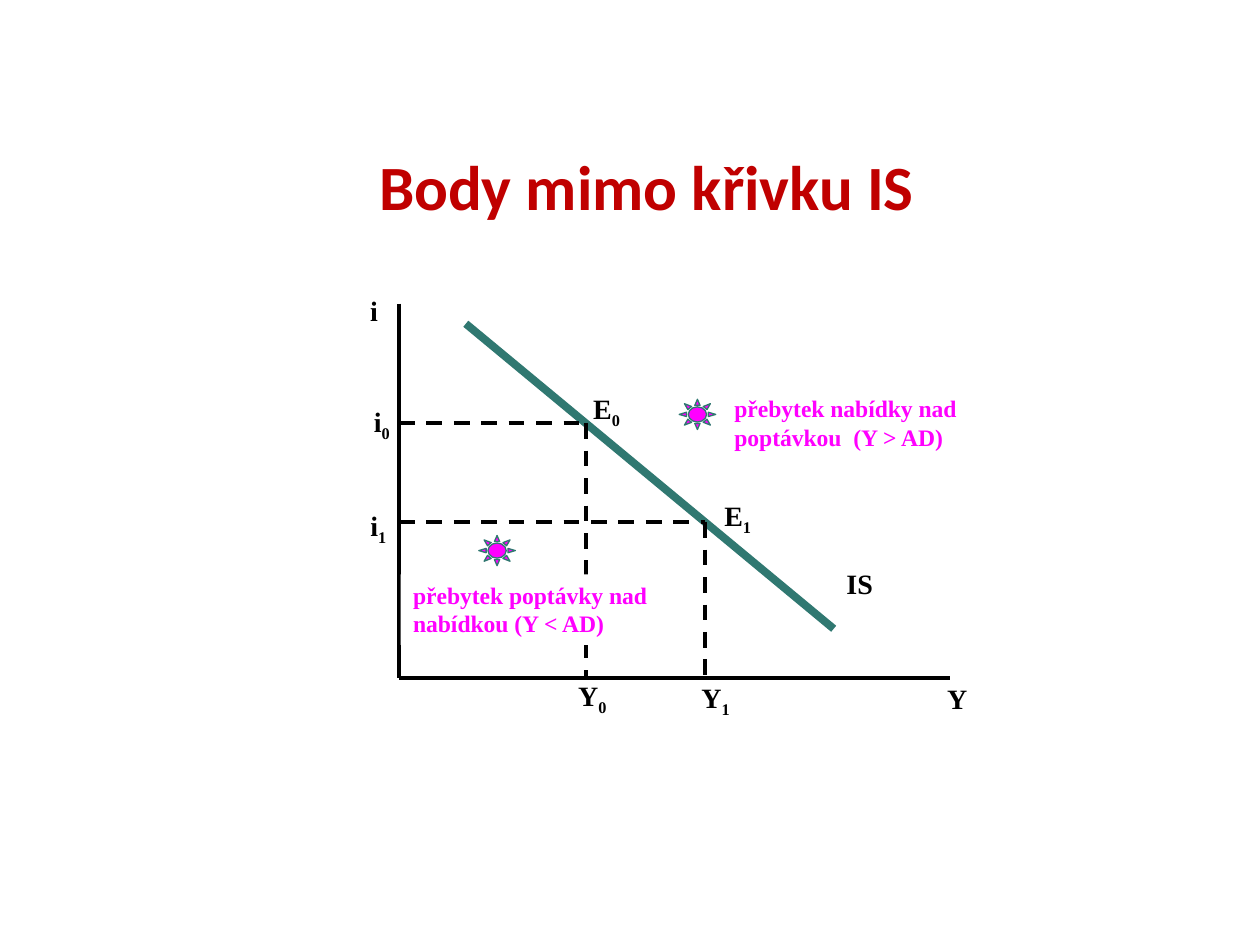
from lxml import etree
from pptx import Presentation
from pptx.dml.color import RGBColor
from pptx.enum.dml import MSO_LINE
from pptx.enum.shapes import MSO_CONNECTOR, MSO_SHAPE
from pptx.enum.text import MSO_ANCHOR, MSO_AUTO_SIZE, PP_ALIGN
from pptx.oxml.ns import qn
from pptx.util import Pt

DASH = MSO_LINE.DASH
LINE = MSO_CONNECTOR.STRAIGHT
SUN = MSO_SHAPE.SUN
TOP = MSO_ANCHOR.TOP
FIXED = MSO_AUTO_SIZE.NONE
GROW = MSO_AUTO_SIZE.SHAPE_TO_FIT_TEXT
CENTER = PP_ALIGN.CENTER

BLACK, RED, TEAL, PINK, WHITE = "000000", "C00000", "307871", "FF00FF", "FFFFFF"
HEAD = {"name": "Calibri", "size": Pt(36), "bold": True}
LABEL = {"name": "Times New Roman", "size": Pt(16), "bold": True}
NOTE = {**LABEL, "size": Pt(13.5)}


def color(code):
    return RGBColor.from_string(code)


def style(font, form, code):
    for key, value in form.items():
        setattr(font, key, value)
    font.color.rgb = color(code)


def add_line(slide, start, end, code=BLACK, width=2.25, dash=None):
    line = slide.shapes.add_connector(LINE, *map(Pt, start + end))
    line.line.color.rgb = color(code)
    line.line.width = Pt(width)
    if dash:
        line.line.dash_style = dash
    etree.SubElement(line._element.spPr, qn("a:effectLst"))


def add_text(slide, box, text, form, code, sub=""):
    shape = slide.shapes.add_textbox(*map(Pt, box))
    frame = shape.text_frame
    frame.word_wrap = True
    frame.auto_size = GROW
    para = frame.paragraphs[0]
    for part in filter(None, (text, sub)):
        run = para.add_run()
        run.text = part
        style(run.font, form, code)
    if sub:
        run._r.get_or_add_rPr().set("baseline", "-25000")
    return shape


def add_sun(slide, box):
    sun = slide.shapes.add_shape(SUN, *map(Pt, box))
    sun.shadow.inherit = False
    sun.fill.solid()
    sun.fill.fore_color.rgb = color(PINK)
    sun.line.color.rgb = color(TEAL)
    sun.line.width = Pt(0.75)


def add_title(slide, box):
    title = slide.shapes.title
    title.left, title.top, title.width, title.height = map(Pt, box)
    frame = title.text_frame
    frame.text = "Body mimo křivku IS"
    frame.auto_size = FIXED
    frame.vertical_anchor = TOP
    frame.margin_top = Pt(6)
    para = frame.paragraphs[0]
    para.alignment = CENTER
    style(para.runs[0].font, HEAD, RED)


def add_graph(slide, box):
    left, top, width, height = box

    def at(x, y):
        return left + x, top + y

    base = at(0, height)
    add_line(slide, at(0, 0), base)
    add_line(slide, base, at(width, height))

    x0, y0, x1, y1 = 38.2, 11.5, 248.4, 185.8
    add_line(slide, at(x0, y0), at(x1, y1), TEAL, 4.5)
    for x in (106.8, 175):
        y = y0 + (x - x0) * (y1 - y0) / (x1 - x0)
        add_line(slide, at(0, y), at(x, y), dash=DASH)
        add_line(slide, at(x, y), at(x, height), dash=DASH)

    labels = [
        ("Y", "", 306.2, 212.4, 17.3),
        ("i", "", -23.5, -9.3, 21.6),
        ("IS", "", 248.6, 146.9, 46.8),
        ("i", "1", -23.5, 113.8, 25.2),
        ("i", "0", -21.4, 54, 25.2),
        ("Y", "1", 165.8, 211.7, 33.8),
        ("Y", "0", 95.3, 211, 46.8),
        ("E", "0", 103.9, 46.8, 33.8),
        ("E", "1", 178.8, 108, 43.9),
    ]
    for text, sub, x, y, wide in labels:
        add_text(slide, (*at(x, y), wide, 26.6), text, LABEL, BLACK, sub)

    for spot in ((160.1, 54.7), (45.6, 132.5)):
        add_sun(slide, (*at(*spot), 20.9, 17.3))

    add_text(slide, (*at(184.6, 48.3), 191.5, 40.3),
             "přebytek nabídky nad poptávkou  (Y > AD)", NOTE, PINK)
    note = add_text(slide, (*at(1, 154.8), 149, 40.3),
                    "přebytek poptávky nad nabídkou (Y < AD)", NOTE, PINK)
    note.fill.solid()
    note.fill.fore_color.rgb = color(WHITE)


def main():
    deck = Presentation()
    deck.slide_width, deck.slide_height = Pt(720), Pt(540)
    slide = deck.slides.add_slide(deck.slide_layouts[5])
    add_title(slide, (123, 78, 493, 40))
    add_graph(slide, (228, 173.5, 315, 213.8))
    deck.save("out.pptx")


if __name__ == "__main__":
    main()
